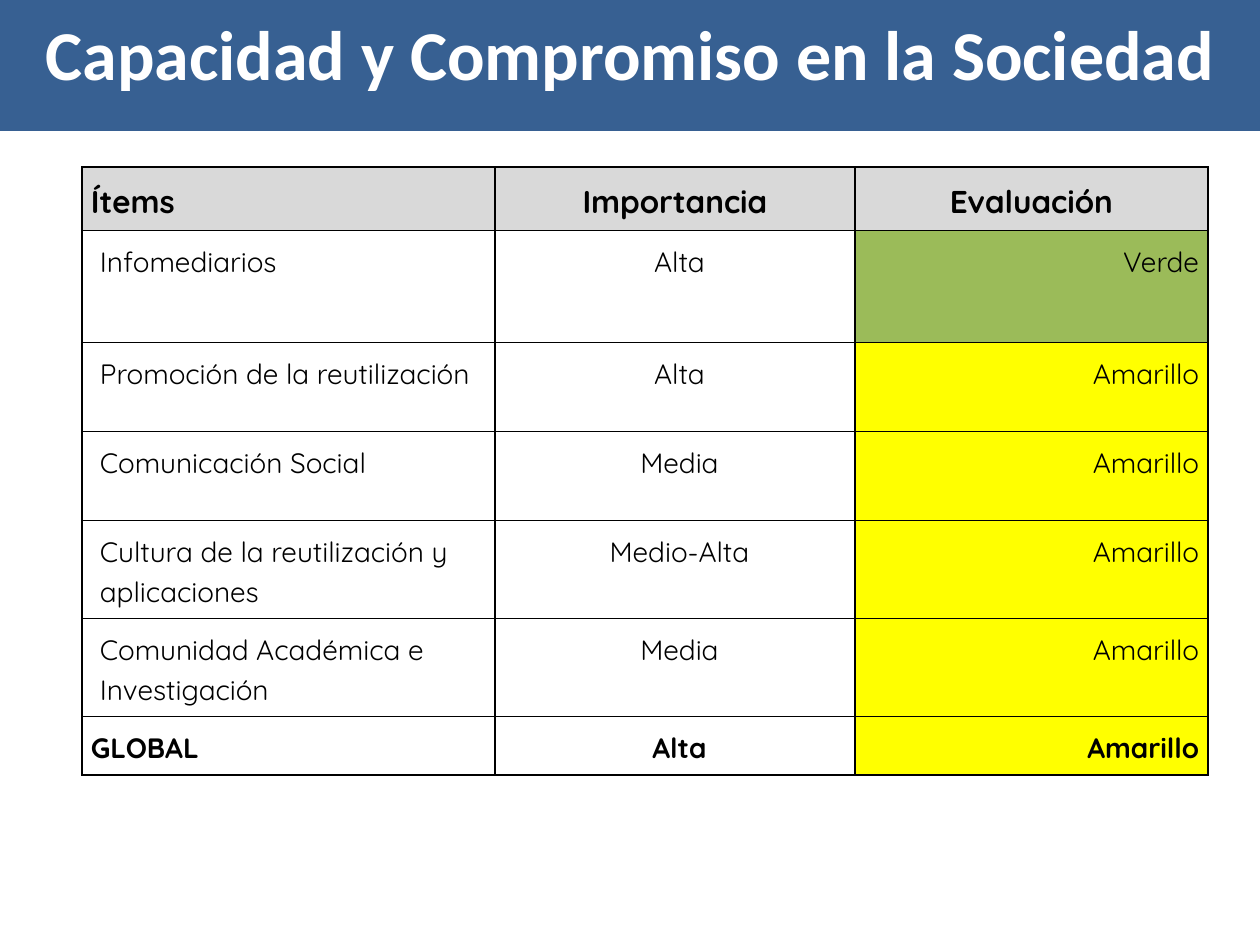
from lxml import etree
from pptx import Presentation
from pptx.dml.color import RGBColor
from pptx.enum.shapes import MSO_SHAPE
from pptx.enum.text import MSO_ANCHOR, PP_ALIGN
from pptx.oxml.ns import qn
from pptx.util import Emu, Pt

COLORS = {
    "band": "376092", "header": "D9D9D9", "verde": "9BBB59",
    "amarillo": "FFFF00", "text": "000000", "white": "FFFFFF",
}
ITEMS = [
    ("Ítems", "Importancia", "Evaluación"),
    ("Infomediarios", "Alta", "Verde"),
    ("Promoción de la reutilización", "Alta", "Amarillo"),
    ("Comunicación Social", "Media", "Amarillo"),
    ("Cultura de la reutilización y aplicaciones", "Medio-Alta", "Amarillo"),
    ("Comunidad Académica e Investigación", "Media", "Amarillo"),
    ("GLOBAL", "Alta", "Amarillo"),
]
COL_WIDTHS = [413, 360, 353]
ROW_HEIGHTS = [55, 112, 89, 89, 89, 89, 55]
CELL_MARGIN = 9


def px(n):
    return Emu(round(n * 914400 / 126))


def rgb(name):
    return RGBColor.from_string(COLORS[name])


def set_font(p, name, size, color, bold):
    p.font.name = name
    p.font.size = Pt(size)
    p.font.bold = bold
    p.font.color.rgb = rgb(color)


def set_borders(cell):
    tcPr = cell._tc.get_or_add_tcPr()
    for i, side in enumerate(("lnL", "lnR", "lnT", "lnB")):
        ln = etree.Element(qn(f"a:{side}"), w=str(Pt(1)))
        fill = etree.SubElement(ln, qn("a:solidFill"))
        etree.SubElement(fill, qn("a:srgbClr"), val=COLORS["text"])
        tcPr.insert(i, ln)


def add_title(slide, x, y, w, h):
    sp = slide.shapes.add_shape(MSO_SHAPE.RECTANGLE, px(x), px(y), px(w), px(h))
    sp.shadow.inherit = False
    sp.fill.solid()
    sp.fill.fore_color.rgb = rgb("band")
    sp.line.fill.background()
    tf = sp.text_frame
    tf.word_wrap = True
    tf.vertical_anchor = MSO_ANCHOR.TOP
    tf.margin_top = px(10)
    p = tf.paragraphs[0]
    p.text = "Capacidad y Compromiso en la Sociedad"
    p.alignment = PP_ALIGN.CENTER
    set_font(p, "Calibri", 40, "white", True)


def fill_cell(cell, text, row, col):
    header, total = row == 0, row == len(ITEMS) - 1
    cell.margin_left = cell.margin_right = px(CELL_MARGIN)
    cell.margin_top = cell.margin_bottom = px(CELL_MARGIN)

    # Background: grey header, traffic light colour in the last column
    if header or col == 2:
        cell.fill.solid()
        cell.fill.fore_color.rgb = rgb("header" if header else text.lower())
    else:
        cell.fill.background()
    set_borders(cell)

    p = cell.text_frame.paragraphs[0]
    p.text = text
    last = PP_ALIGN.CENTER if header else PP_ALIGN.RIGHT
    p.alignment = (PP_ALIGN.LEFT, PP_ALIGN.CENTER, last)[col]
    p.line_spacing = 1.15
    p.space_after = Pt(10)
    if not header and (col == 1 or col == 0 and not total):
        pPr = p._p.get_or_add_pPr()
        pPr.set("marL", str(px(CELL_MARGIN)))
        pPr.set("indent", "0")
    set_font(p, "Quicksand", 18 if header else 16, "text", header or total)


def add_items_table(slide, x, y):
    frame = slide.shapes.add_table(
        len(ITEMS), len(COL_WIDTHS), px(x), px(y),
        px(sum(COL_WIDTHS)), px(sum(ROW_HEIGHTS)))
    table = frame.table
    table.first_row = table.horz_banding = False
    for column, width in zip(table.columns, COL_WIDTHS):
        column.width = px(width)
    for r, (height, texts) in enumerate(zip(ROW_HEIGHTS, ITEMS)):
        table.rows[r].height = px(height)
        for c, text in enumerate(texts):
            fill_cell(table.cell(r, c), text, r, c)


def main():
    prs = Presentation()
    prs.slide_width, prs.slide_height = px(1260), px(945)
    s = prs.slides.add_slide(prs.slide_layouts[6])
    add_items_table(s, 82, 167)
    add_title(s, 0, 0, 1260, 131)
    prs.save("out.pptx")


if __name__ == "__main__":
    main()
